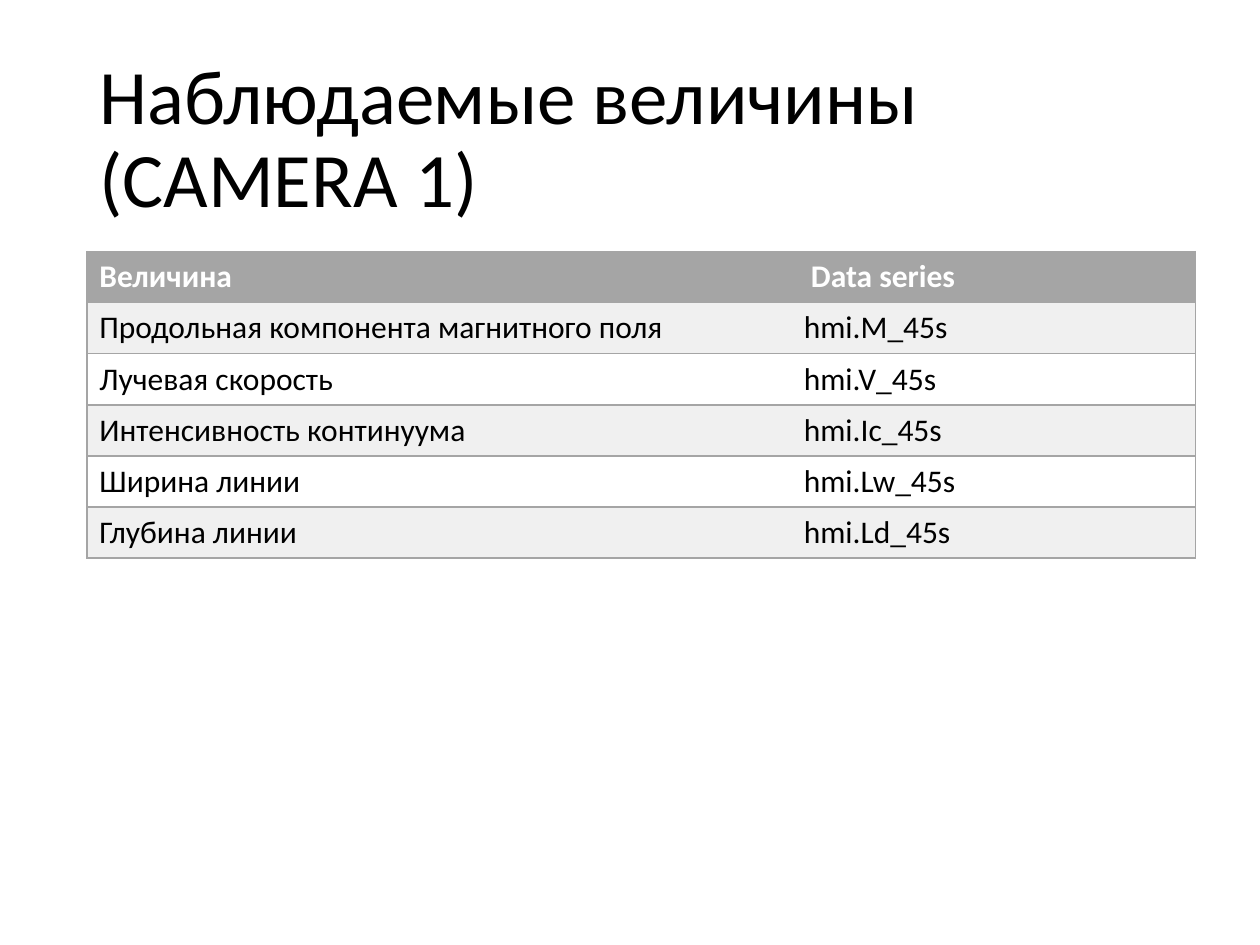
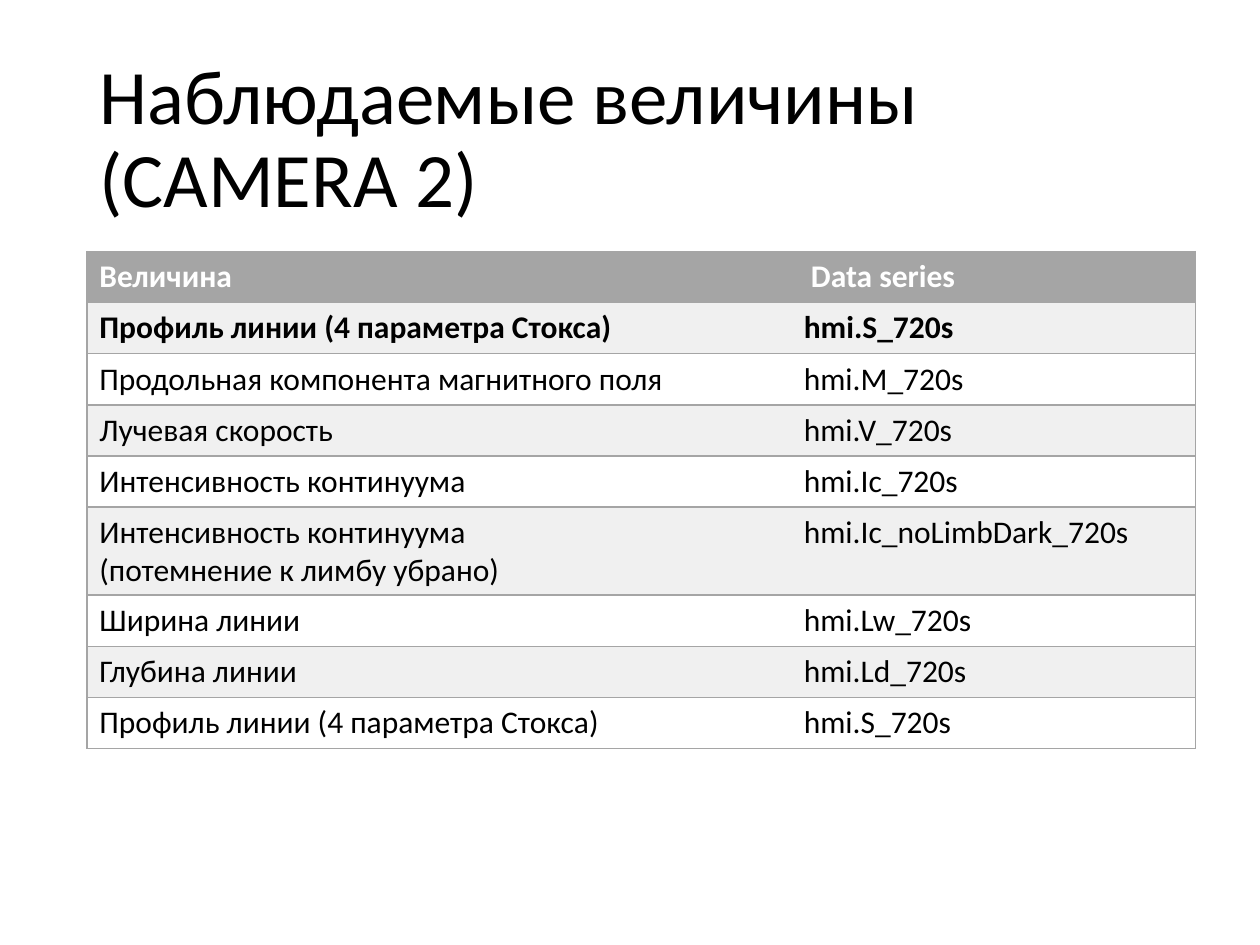
from lxml.etree import SubElement as add_element
from pptx import Presentation
from pptx.dml.color import RGBColor as Rgb
from pptx.enum.text import MSO_ANCHOR as Anchor
from pptx.oxml.ns import qn
from pptx.util import Cm, Pt

COLORS = {"text": "000000", "header_text": "FFFFFF", "accent": "A5A5A5",
          "band": "F0F0F0", "plain": "FFFFFF"}
FONT = "Calibri"
LEFT = Cm(1.75)
ROW_HEIGHT = Cm(1.03)
COLUMN_WIDTHS = (Cm(14.2), Cm(8.15))
HEADER = ("Величина", " Data series")
STOKES = "Профиль линии (4 параметра Стокса)"
FIELD = "Продольная компонента магнитного поля"
CONTINUUM = "Интенсивность континуума"

# Each camera: number, quantities with data series, body rows set in bold
CAMERAS = (
    (1, (
        (FIELD, "hmi.M_45s"),
        ("Лучевая скорость", "hmi.V_45s"),
        (CONTINUUM, "hmi.Ic_45s"),
        ("Ширина линии", "hmi.Lw_45s"),
        ("Глубина линии", "hmi.Ld_45s"),
    ), ()),
    (2, (
        (STOKES, "hmi.S_720s"),
        (FIELD, "hmi.M_720s"),
        ("Лучевая скорость", "hmi.V_720s"),
        (CONTINUUM, "hmi.Ic_720s"),
        (CONTINUUM + "\n(потемнение к лимбу убрано)", "hmi.Ic_noLimbDark_720s"),
        ("Ширина линии", "hmi.Lw_720s"),
        ("Глубина линии", "hmi.Ld_720s"),
        (STOKES, "hmi.S_720s"),
    ), (1,)),
)


def write(para, text, color, **font_values):
    """Put text in a paragraph; a newline becomes a line break."""
    para.text = text
    for span in para.runs:
        span.font.color.rgb = Rgb.from_string(COLORS[color])
        for name, value in {"name": FONT, **font_values}.items():
            setattr(span.font, name, value)


def add_title(page, text):
    box = page.shapes.add_textbox(LEFT, Cm(1.01), Cm(21.9), Cm(3.68))
    frame = box.text_frame
    for name, value in {"word_wrap": True, "vertical_anchor": Anchor.MIDDLE}.items():
        setattr(frame, name, value)
    para = frame.paragraphs[0]
    para.line_spacing = 0.9
    write(para, text, "text", size=Pt(44))


def set_borders(cell, visible_sides):
    """Draw the given sides of a cell and hide the others."""
    properties = cell._tc.get_or_add_tcPr()
    for side in "LRTB":
        line = add_element(properties, qn(f"a:ln{side}"), w=str(Pt(1)))
        if side in visible_sides:
            fill = add_element(line, qn("a:solidFill"))
            add_element(fill, qn("a:srgbClr"), val=COLORS["accent"])
        else:
            add_element(line, qn("a:noFill"))


def add_series_table(page, body, bold_rows):
    rows = (HEADER, *body)
    frame = page.shapes.add_table(len(rows), len(HEADER), LEFT, Cm(5.07),
                                  sum(COLUMN_WIDTHS), ROW_HEIGHT * len(rows))
    table = frame.table
    for column, width in zip(table.columns, COLUMN_WIDTHS):
        column.width = width
    for row_index, values in enumerate(rows):
        table.rows[row_index].height = ROW_HEIGHT
        is_header = row_index == 0
        background = "accent" if is_header else ("plain", "band")[row_index % 2]
        for column_index, value in enumerate(values):
            cell = table.cell(row_index, column_index)
            # Only the outer verticals and the row rules are drawn
            set_borders(cell, "TB" + "LR"[column_index])
            cell.fill.solid()
            cell.fill.fore_color.rgb = Rgb.from_string(COLORS[background])
            write(cell.text_frame.paragraphs[0], value,
                  "header_text" if is_header else "text",
                  size=Pt(18), bold=is_header or row_index in bold_rows)


def main():
    deck = Presentation()
    deck.slide_width, deck.slide_height = Cm(25.4), Cm(19.05)
    for number, body, bold_rows in CAMERAS:
        page = deck.slides.add_slide(deck.slide_layouts[6])
        add_title(page, f"Наблюдаемые величины (CAMERA {number})")
        add_series_table(page, body, bold_rows)
    deck.save("out.pptx")


if __name__ == "__main__":
    main()
